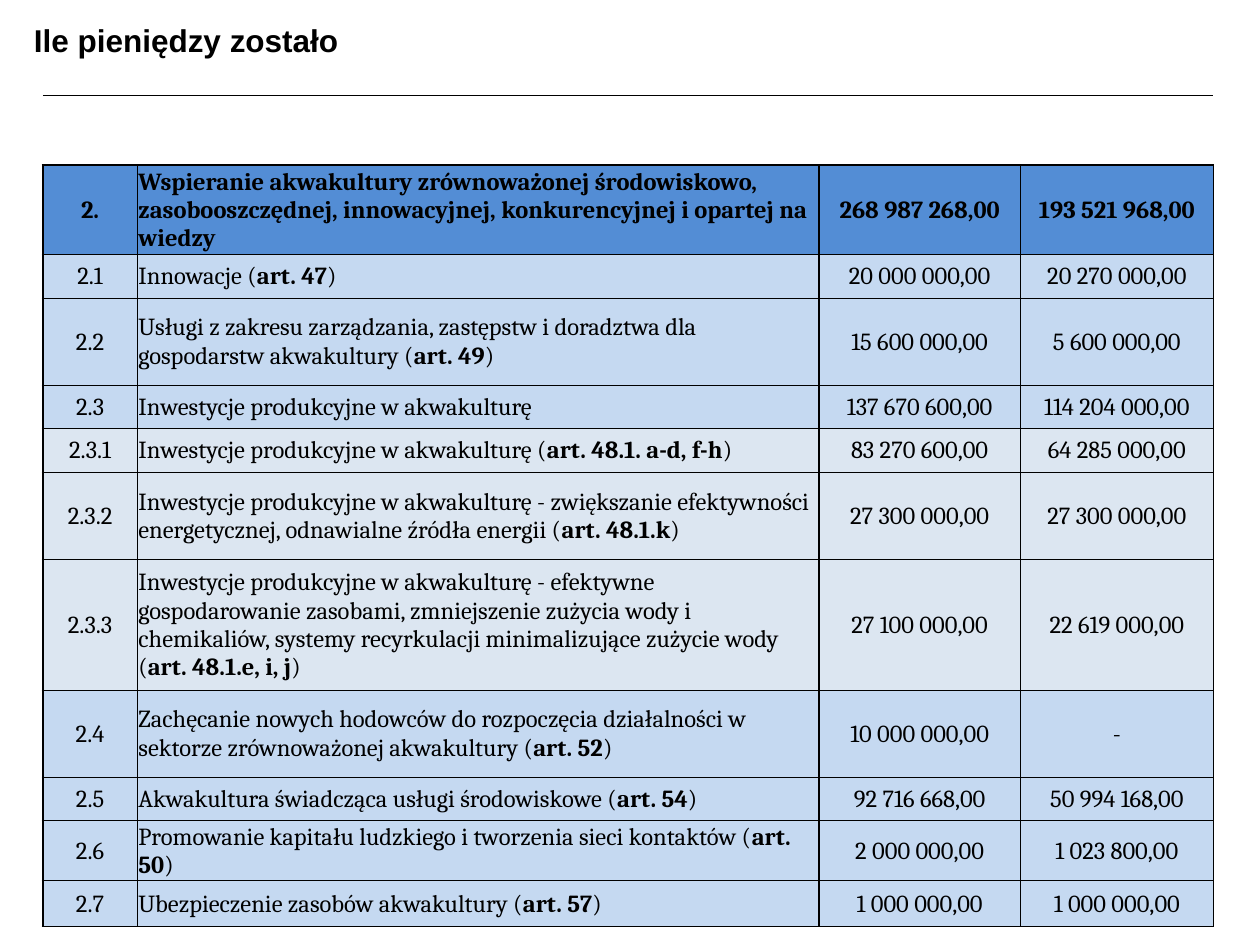
from lxml import etree
from pptx import Presentation
from pptx.dml.color import RGBColor
from pptx.enum.shapes import MSO_CONNECTOR
from pptx.enum.text import MSO_ANCHOR, MSO_AUTO_SIZE, PP_ALIGN
from pptx.oxml.ns import qn
from pptx.util import Pt

STRAIGHT = MSO_CONNECTOR.STRAIGHT
MIDDLE = MSO_ANCHOR.MIDDLE
LEFT, CENTER = PP_ALIGN.LEFT, PP_ALIGN.CENTER
FIT_SHAPE = MSO_AUTO_SIZE.SHAPE_TO_FIT_TEXT

BLACK = RGBColor(0x00, 0x00, 0x00)
PRIORITY_BLUE = RGBColor(0x53, 0x8D, 0xD5)
MEASURE_BLUE = RGBColor(0xC5, 0xD9, 0xF1)
SUBMEASURE_BLUE = RGBColor(0xDC, 0xE6, 0xF1)

TITLE = "Ile pieniędzy zostało"

# number, description, article, allocated amount, remaining amount, height in row units
MEASURES = [
    ("2.", "Wspieranie akwakultury zrównoważonej środowiskowo, zasobooszczędnej, "
     "innowacyjnej, konkurencyjnej i opartej na wiedzy", "",
     "268 987 268,00", "193 521 968,00", 2),
    ("2.1", "Innowacje", "art. 47", "20 000 000,00", "20 270 000,00", 1),
    ("2.2", "Usługi z zakresu zarządzania, zastępstw i doradztwa dla gospodarstw akwakultury",
     "art. 49", "15 600 000,00", "5 600 000,00", 2),
    ("2.3", "Inwestycje produkcyjne w akwakulturę", "",
     "137 670 600,00", "114 204 000,00", 1),
    ("2.3.1", "Inwestycje produkcyjne w akwakulturę", "art. 48.1. a-d, f-h",
     "83 270 600,00", "64 285 000,00", 1),
    ("2.3.2", "Inwestycje produkcyjne w akwakulturę - zwiększanie efektywności "
     "energetycznej, odnawialne źródła energii", "art. 48.1.k",
     "27 300 000,00", "27 300 000,00", 2),
    ("2.3.3", "Inwestycje produkcyjne w akwakulturę - efektywne gospodarowanie zasobami, "
     "zmniejszenie zużycia wody i chemikaliów, systemy recyrkulacji minimalizujące "
     "zużycie wody", "art. 48.1.e, i, j", "27 100 000,00", "22 619 000,00", 3),
    ("2.4", "Zachęcanie nowych hodowców do rozpoczęcia działalności w sektorze "
     "zrównoważonej akwakultury", "art. 52", "10 000 000,00", "-", 2),
    ("2.5", "Akwakultura świadcząca usługi środowiskowe", "art. 54",
     "92 716 668,00", "50 994 168,00", 1),
    ("2.6", "Promowanie kapitału ludzkiego i tworzenia sieci kontaktów", "art. 50",
     "2 000 000,00", "1 023 800,00", 1),
    ("2.7", "Ubezpieczenie zasobów akwakultury", "art. 57",
     "1 000 000,00", "1 000 000,00", 1.06),
]

TABLE_LEFT, TABLE_TOP, ROW_UNIT = 24.5, 94.3, 24.9
COLUMN_WIDTHS = [54, 389.5, 115.2, 110.2]
COLUMN_ALIGNMENTS = [CENTER, LEFT, CENTER, CENTER]
VERTICAL_RULES = [1.5, 0.5, 1, 0.5, 0.5]
HORIZONTAL_RULES = [1] + [0.5] * (len(MEASURES) - 1) + [1]


def add_run(paragraph, text, font_name, size, bold):
    run = paragraph.add_run()
    run.text = text
    run.font.name = font_name
    run.font.size = Pt(size)
    run.font.bold = bold
    run.font.color.rgb = BLACK


def set_borders(cell, widths):
    """Draw black borders; widths maps lnL, lnR, lnT, lnB (in that order) to points."""
    properties = cell._tc.get_or_add_tcPr()
    for tag, width in widths.items():
        line = etree.SubElement(properties, qn("a:" + tag), w=str(Pt(width)))
        fill = etree.SubElement(line, qn("a:solidFill"))
        etree.SubElement(fill, qn("a:srgbClr"), val=str(BLACK))


def row_color(number):
    return [PRIORITY_BLUE, MEASURE_BLUE, SUBMEASURE_BLUE][len(number.strip(".").split(".")) - 1]


def add_title(slide):
    box = slide.shapes.add_textbox(Pt(16.5), Pt(9.4), Pt(686), Pt(27.4))
    frame = box.text_frame
    frame.word_wrap = True
    frame.auto_size = FIT_SHAPE
    frame.margin_left = frame.margin_right = Pt(2.9)
    frame.margin_top = frame.margin_bottom = Pt(2.9)
    add_run(frame.paragraphs[0], TITLE, "Arial", 18, True)

    right = TABLE_LEFT + sum(COLUMN_WIDTHS)
    rule = slide.shapes.add_connector(STRAIGHT, Pt(TABLE_LEFT), Pt(54.7), Pt(right), Pt(54.7))
    rule.line.color.rgb = BLACK
    rule.line.width = Pt(0.75)
    etree.SubElement(rule._element.spPr, qn("a:effectLst"))


def add_measures_table(slide):
    heights = [ROW_UNIT * measure[-1] for measure in MEASURES]
    table = slide.shapes.add_table(
        len(MEASURES), len(COLUMN_WIDTHS), Pt(TABLE_LEFT), Pt(TABLE_TOP),
        Pt(sum(COLUMN_WIDTHS)), Pt(sum(heights))).table
    table.first_row = table.horz_banding = False
    for column, width in zip(table.columns, COLUMN_WIDTHS):
        column.width = Pt(width)

    for row, (number, description, article, allocated, remaining, _) in enumerate(MEASURES):
        table.rows[row].height = Pt(heights[row])
        is_priority = row == 0
        for column, text in enumerate([number, description, allocated, remaining]):
            cell = table.cell(row, column)
            cell.vertical_anchor = MIDDLE
            cell.margin_left = cell.margin_right = cell.margin_top = Pt(0.6)
            cell.margin_bottom = Pt(0)
            set_borders(cell, {
                "lnL": VERTICAL_RULES[column], "lnR": VERTICAL_RULES[column + 1],
                "lnT": HORIZONTAL_RULES[row], "lnB": HORIZONTAL_RULES[row + 1]})
            cell.fill.solid()
            cell.fill.fore_color.rgb = row_color(number)

            runs = [(text, is_priority)]
            if column == 1 and article:
                runs = [(text + " (", False), (article, True), (")", False)]
            paragraph = cell.text_frame.paragraphs[0]
            paragraph.alignment = COLUMN_ALIGNMENTS[column]
            for run_text, bold in runs:
                add_run(paragraph, run_text, "Cambria", 14, bold)


def main():
    presentation = Presentation()
    presentation.slide_width, presentation.slide_height = Pt(720), Pt(540)
    slide = presentation.slides.add_slide(presentation.slide_layouts[6])
    add_title(slide)
    add_measures_table(slide)
    presentation.save("out.pptx")


if __name__ == "__main__":
    main()
